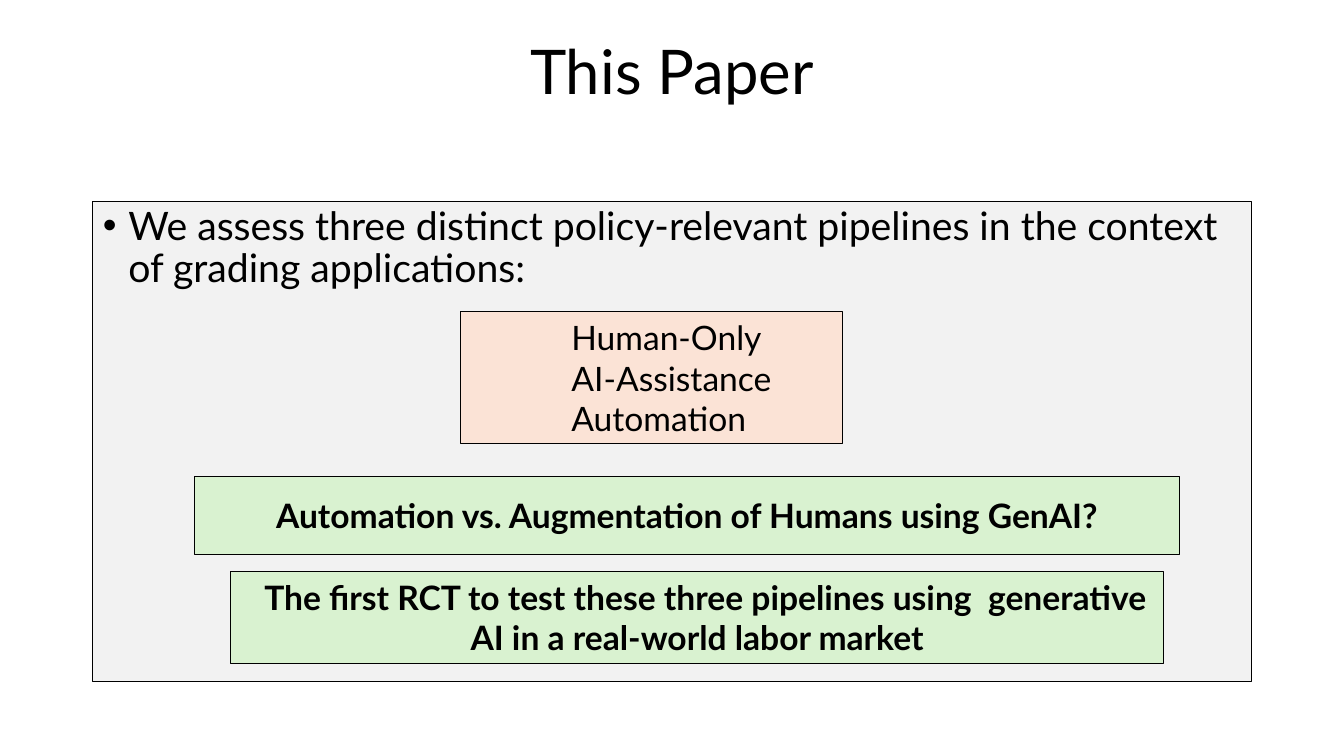
"""Build the slide that presents the three grading pipelines of the paper."""
from pptx import Presentation
from pptx.dml.color import RGBColor
from pptx.enum.shapes import MSO_SHAPE
from pptx.enum.text import MSO_ANCHOR as Anchor, MSO_AUTO_SIZE as AutoSize, PP_ALIGN as Align
from pptx.util import Cm, Pt

BLACK = RGBColor(0x00, 0x00, 0x00)
GRAY = RGBColor(0xF2, 0xF2, 0xF2)
GREEN = RGBColor(0xD9, 0xF2, 0xD0)
PEACH = RGBColor(0xFB, 0xE3, 0xD6)

HEADING = "This Paper"
INTRO = ("We assess three distinct policy-relevant pipelines "
         "in the context of grading applications:")
CALLOUTS = [
    {"lines": ["Automation vs. Augmentation of Humans using GenAI?"],
     "box": (4.9, 12.01, 24.82, 1.96), "color": GREEN,
     "bold": True, "align": Align.CENTER, "margin": 0, "indent": 0},
    {"lines": ["Human-Only", "AI-Assistance", "Automation"],
     "box": (11.61, 7.85, 9.63, 3.33), "color": PEACH,
     "bold": False, "align": Align.LEFT, "margin": 2.54, "indent": 0},
    {"lines": ["The first RCT to test these three pipelines using  generative "
               "AI in a real-world labor market"],
     "box": (5.82, 14.4, 23.5, 2.31), "color": GREEN,
     "bold": True, "align": Align.CENTER, "margin": 0, "indent": 0.41},
]


def apply(target, values):
    """Set every attribute of the target from a dict of values."""
    for name, value in values.items():
        setattr(target, name, value)


def place(part, box):
    """Move and size a part, given its box in centimetres."""
    apply(part, dict(zip(("left", "top", "width", "height"), map(Cm, box))))


def paint(part, color):
    """Fill a part and give it a thin black outline."""
    part.fill.solid()
    part.fill.fore_color.rgb = color
    part.line.color.rgb = BLACK
    part.line.width = Pt(0.75)


def write(part, lines, size, align, bold=False, spacing=1.0, margin=0, indent=0,
          anchor=Anchor.MIDDLE):
    """Write one formatted paragraph for each line."""
    frame = part.text_frame
    frame.text = "\n".join(lines)
    apply(frame, {"word_wrap": True, "auto_size": AutoSize.NONE, "vertical_anchor": anchor})
    for paragraph in frame.paragraphs:
        apply(paragraph, {"alignment": align, "line_spacing": spacing, "space_before": Pt(0)})
        apply(paragraph.font, {"name": "Lato", "size": Pt(size), "bold": bold})
        paragraph.font.color.rgb = BLACK
        properties = paragraph._p.get_or_add_pPr()
        properties.set("marL", str(Cm(margin)))
        properties.set("indent", str(Cm(indent)))


def main():
    """Lay out the title, the introduction and the callouts."""
    deck = Presentation()
    apply(deck, {"slide_width": Cm(33.87), "slide_height": Cm(19.05)})
    slide = deck.slides.add_slide(deck.slide_layouts[1])

    title = slide.shapes.title
    place(title, (0, 0.05, 33.87, 3.68))
    write(title, [HEADING], 44, Align.CENTER, spacing=0.9)

    intro = slide.placeholders[1]
    place(intro, (2.34, 5.08, 29.21, 12.09))
    paint(intro, GRAY)
    write(intro, [INTRO], 28, Align.LEFT, spacing=0.9, margin=0.64, indent=-0.64,
          anchor=Anchor.TOP)

    for callout in CALLOUTS:
        panel = slide.shapes.add_shape(MSO_SHAPE.RECTANGLE, *map(Cm, callout["box"]))
        panel.shadow.inherit = False
        paint(panel, callout["color"])
        write(panel, callout["lines"], 24, callout["align"], callout["bold"],
              margin=callout["margin"], indent=callout["indent"])

    deck.save("out.pptx")


if __name__ == "__main__":
    main()
